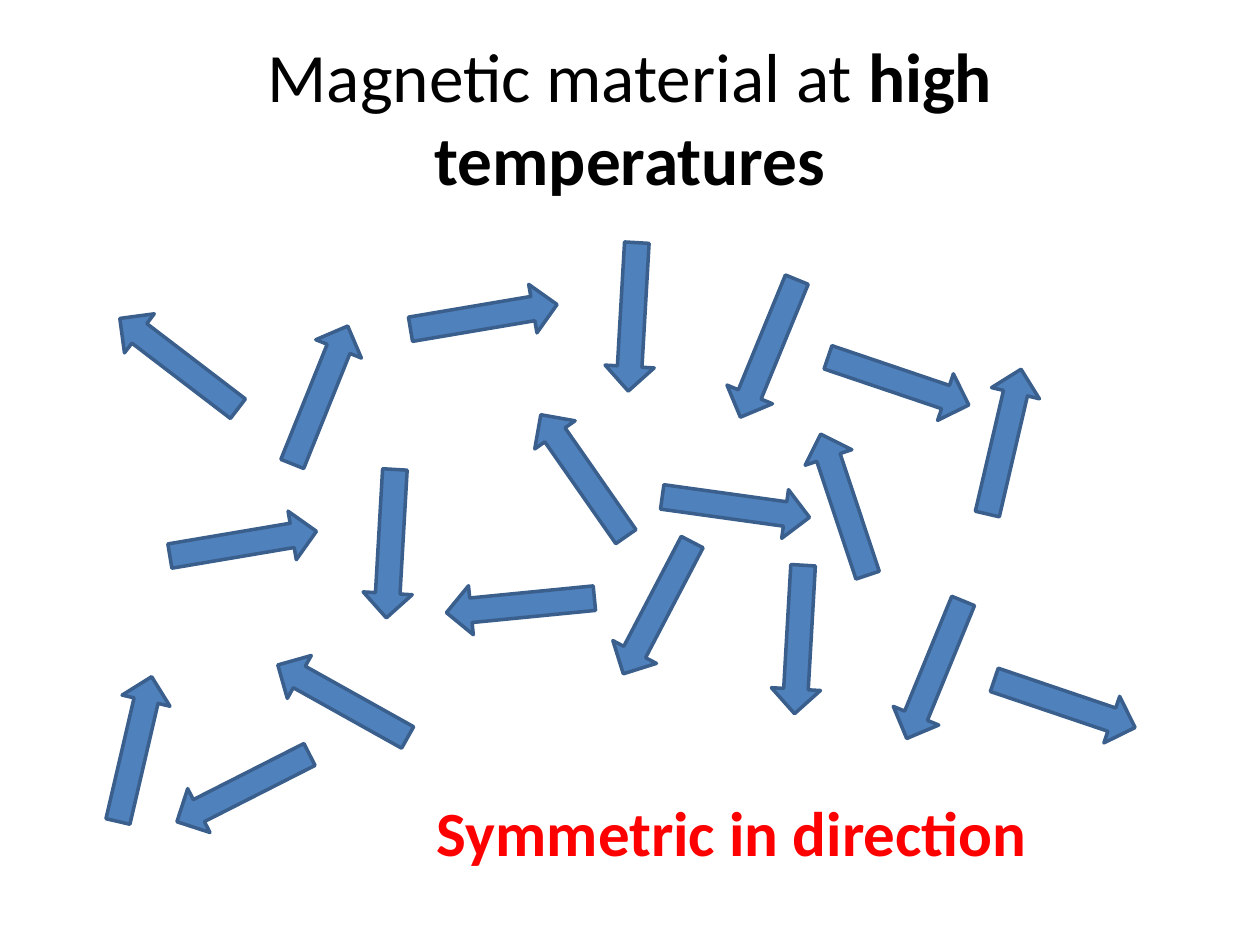
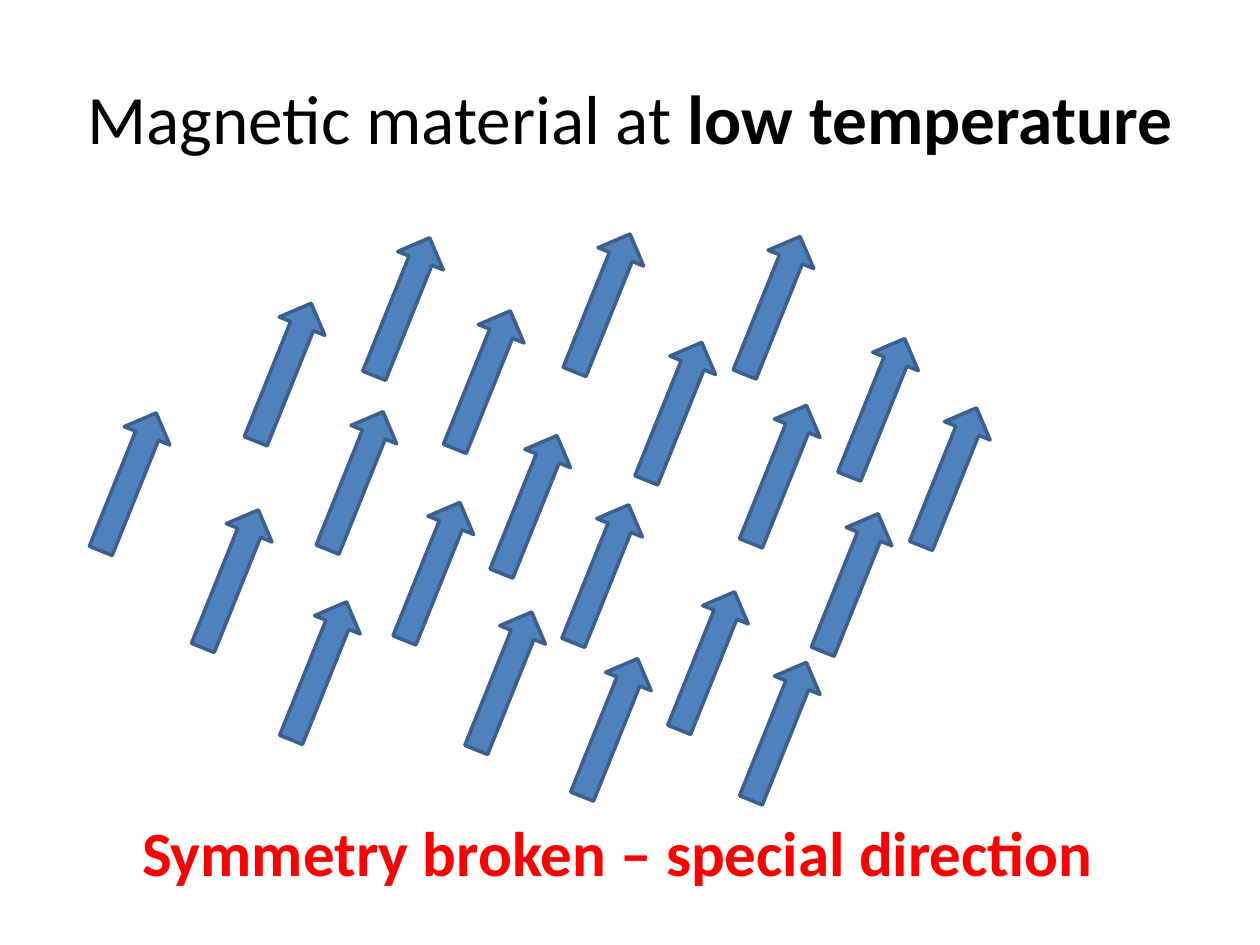
from dataclasses import dataclass

from pptx import Presentation
from pptx.dml.color import RGBColor
from pptx.enum.shapes import MSO_SHAPE
from pptx.enum.text import MSO_ANCHOR, MSO_AUTO_SIZE, PP_ALIGN
from pptx.presentation import Presentation as Deck
from pptx.slide import Slide
from pptx.util import Inches, Pt

COLORS = {"title": "000000", "arrow": "4F81BD", "outline": "3A5F8C", "caption": "FF0000"}
FONT = "Calibri"
TITLE_LAYOUT = 5
ARROW_WIDTH, ARROW_HEIGHT = 1.18, 0.39
ALIGNED_ANGLE = 291.9


@dataclass(frozen=True)
class Spin:
    left: float
    top: float
    angle: float = ALIGNED_ANGLE


@dataclass(frozen=True)
class Caption:
    text: str
    left: float
    top: float
    width: float
    height: float = 0.71


@dataclass(frozen=True)
class MagnetPage:
    temperature: str
    spins: list[Spin]
    caption: Caption


DISORDERED = [
    Spin(1.34, 4.12, 350.4), Spin(2.51, 4.12, 93.3), Spin(2.13, 5.37, 209.2),
    Spin(4.63, 4.63, 117.6), Spin(3.54, 4.61, 174.4), Spin(5.25, 3.83, 7.9),
    Spin(3.25, 2.32, 350.4), Spin(4.43, 2.32, 93.3), Spin(4.04, 3.58, 235.1),
    Spin(6.54, 2.83, 18.7), Spin(5.51, 2.57, 112.3), Spin(6.11, 3.81, 251.6),
    Spin(7.38, 3.31, 283.1), Spin(0.48, 5.75, 283.1), Spin(5.75, 4.88, 93.3),
    Spin(7.86, 5.39, 18.7), Spin(6.83, 5.12, 112.3), Spin(1.34, 6.06, 153.1),
    Spin(0.83, 2.69, 217.4), Spin(1.95, 2.94, 291.9),
]
ALIGNED = [
    Spin(1.66, 2.76), Spin(2.23, 3.62), Spin(2.6, 2.24), Spin(3.24, 2.82),
    Spin(2.84, 4.34), Spin(3.61, 3.81), Spin(4.18, 4.36), Spin(4.19, 2.21),
    Spin(4.76, 3.07), Spin(5.54, 2.23), Spin(5.59, 3.57), Spin(6.16, 4.43),
    Spin(6.37, 3.04), Spin(6.94, 3.59), Spin(5.02, 5.05), Spin(3.41, 5.21),
    Spin(4.25, 5.58), Spin(5.59, 5.61), Spin(0.43, 3.63), Spin(1.24, 4.4),
    Spin(1.94, 5.13),
]
PAGES = [
    MagnetPage("high temperatures", DISORDERED,
               Caption("Symmetric in direction", 3.37, 6.25, 4.94)),
    MagnetPage("low temperature", ALIGNED,
               Caption("Symmetry broken – special direction", 1.03, 6.41, 7.83)),
]


def color(name: str) -> RGBColor:
    return RGBColor.from_string(COLORS[name])


def set_title(page: Slide, temperature: str) -> None:
    title = page.shapes.title
    title.left, title.top = Inches(0.5), Inches(0.3)
    title.width, title.height = Inches(9), Inches(1.25)
    frame = title.text_frame
    frame.auto_size = MSO_AUTO_SIZE.NONE
    frame.word_wrap = True
    frame.vertical_anchor = MSO_ANCHOR.MIDDLE
    para = frame.paragraphs[0]
    para.alignment = PP_ALIGN.CENTER
    para.font.name = FONT
    para.font.size = Pt(39.6)
    para.font.color.rgb = color("title")
    para.add_run().text = "Magnetic material at "
    emphasis = para.add_run()
    emphasis.text = temperature
    emphasis.font.bold = True


def add_spin(page: Slide, spin: Spin) -> None:
    arrow = page.shapes.add_shape(
        MSO_SHAPE.RIGHT_ARROW, Inches(spin.left), Inches(spin.top),
        Inches(ARROW_WIDTH), Inches(ARROW_HEIGHT))
    arrow.rotation = spin.angle
    arrow.shadow.inherit = False
    arrow.fill.solid()
    arrow.fill.fore_color.rgb = color("arrow")
    arrow.line.color.rgb = color("outline")
    arrow.line.width = Pt(2)


def add_caption(page: Slide, caption: Caption) -> None:
    box = page.shapes.add_textbox(
        Inches(caption.left), Inches(caption.top),
        Inches(caption.width), Inches(caption.height))
    frame = box.text_frame
    frame.word_wrap = False
    frame.auto_size = MSO_AUTO_SIZE.SHAPE_TO_FIT_TEXT
    para = frame.paragraphs[0]
    para.text = caption.text
    para.font.name = FONT
    para.font.size = Pt(36)
    para.font.bold = True
    para.font.color.rgb = color("caption")


def add_magnet_page(deck: Deck, content: MagnetPage) -> None:
    page = deck.slides.add_slide(deck.slide_layouts[TITLE_LAYOUT])
    set_title(page, content.temperature)
    for spin in content.spins:
        add_spin(page, spin)
    add_caption(page, content.caption)


def main() -> None:
    deck = Presentation()
    deck.slide_width, deck.slide_height = Inches(10), Inches(7.5)
    for content in PAGES:
        add_magnet_page(deck, content)
    deck.save("out.pptx")


if __name__ == "__main__":
    main()
